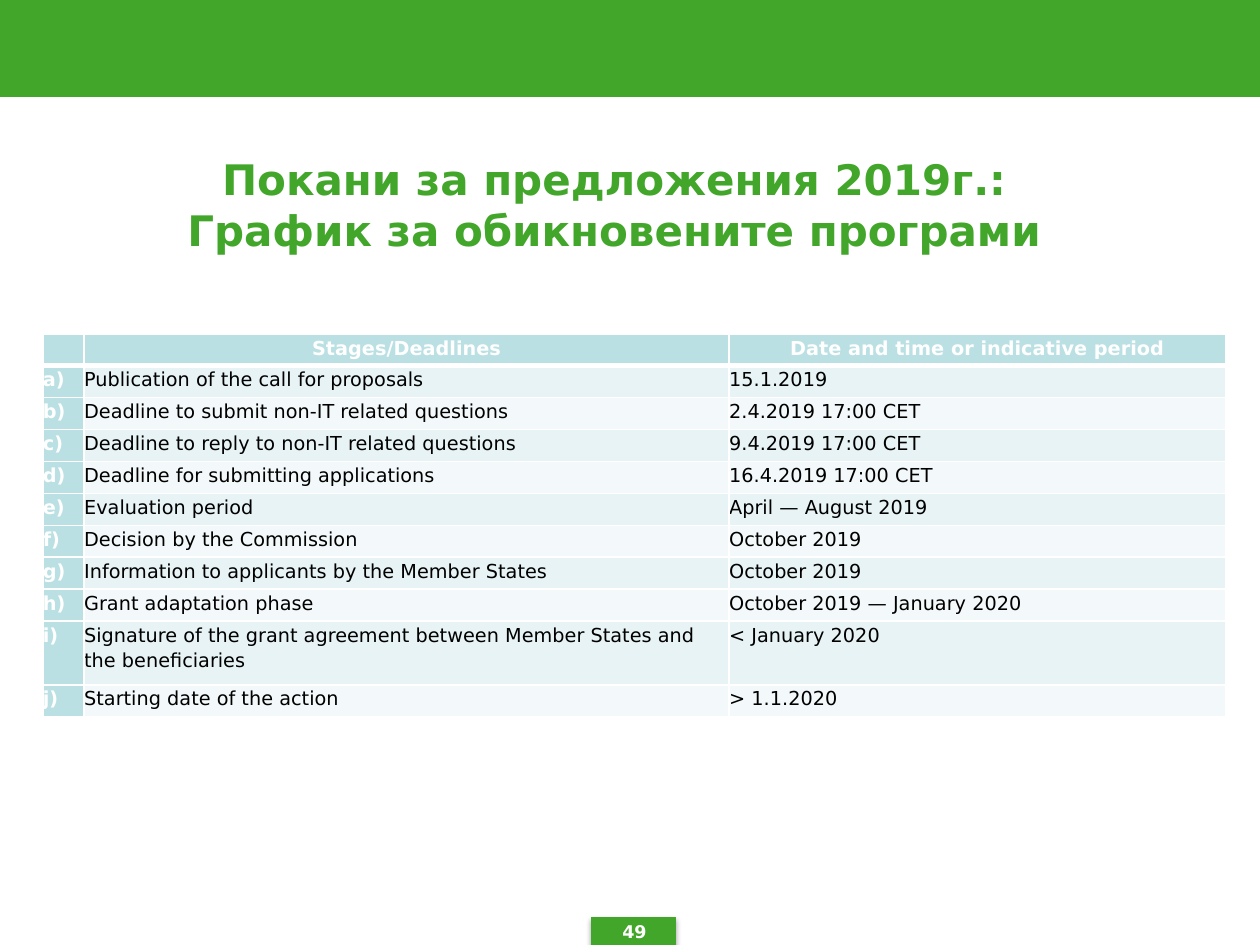
"""Builds the slide with the 2019 call schedule for simple programmes."""
from lxml import etree
from pptx import Presentation, util as u
from pptx.dml import color
from pptx.enum import shapes, text
from pptx.oxml import ns

COLORS = {"green": "42A62A", "white": "FFFFFF", "black": "000000",
          "key": "BBE0E3", "odd": "E7F3F4", "even": "F3F9FA"}
HEADER = ("", "Stages/Deadlines", "Date and time or indicative period")
STAGES = [
    ("Publication of the call for proposals", "15.1.2019"),
    ("Deadline to submit non-IT related questions", "2.4.2019 17:00 CET"),
    ("Deadline to reply to non-IT related questions", "9.4.2019 17:00 CET"),
    ("Deadline for submitting applications", "16.4.2019 17:00 CET"),
    ("Evaluation period", "April — August 2019"),
    ("Decision by the Commission", "October 2019"),
    ("Information to applicants by the Member States", "October 2019"),
    ("Grant adaptation phase", "October 2019 — January 2020"),
    ("Signature of the grant agreement between Member States and the beneficiaries",
     "< January 2020"),
    ("Starting date of the action", "> 1.1.2020"),
]
ROW_HEIGHT = 18.24
LONG_ROW = 9


def rgb(name):
    return color.RGBColor.from_string(COLORS[name])


def child(parent, tag, **attributes):
    return etree.SubElement(parent, ns.qn(tag), attributes)


class ScheduleSlide:
    """Holds the style and the current slide."""

    def __init__(self, slide, font="DejaVu Sans"):
        self.slide = slide
        self.font = font

    def style(self, paragraph, size, ink, bold=False, align=text.PP_ALIGN.CENTER):
        paragraph.alignment = align
        font = paragraph.font
        font.name, font.size, font.bold = self.font, u.Pt(size), bold
        font.color.rgb = rgb(ink)

    def bar(self, left, top, width, height, shadow=False):
        bar = self.slide.shapes.add_shape(
            shapes.MSO_SHAPE.RECTANGLE, *map(u.Pt, (left, top, width, height)))
        bar.shadow.inherit = False
        bar.fill.solid()
        bar.fill.fore_color.rgb = bar.line.color.rgb = rgb("green")
        bar.line.width = u.Pt(0.75)
        if shadow:
            effects = bar._element.spPr.find(ns.qn("a:effectLst"))
            outer = child(effects, "a:outerShdw", blurRad=str(u.Pt(3.1)),
                          dist=str(u.Pt(1.8)), dir="5400000", rotWithShape="0")
            shade = child(outer, "a:srgbClr", val=COLORS["black"])
            child(shade, "a:alpha", val="35000")

    def title(self, wording, left, top, width, height):
        title = self.slide.shapes.title
        title.left, title.top, title.width, title.height = map(
            u.Pt, (left, top, width, height))
        frame = title.text_frame
        frame.text = wording
        frame.auto_size = text.MSO_AUTO_SIZE.NONE
        frame.vertical_anchor = text.MSO_ANCHOR.MIDDLE
        self.style(frame.paragraphs[0], 24, "green", bold=True)

    def label(self, wording, left, top, width, height):
        frame = self.slide.shapes.add_textbox(
            *map(u.Pt, (left, top, width, height))).text_frame
        frame.word_wrap = True
        frame.text = wording
        self.style(frame.paragraphs[0], 10, "white", bold=True)

    def cell(self, cell, wording, fill, ink, bold, align, top=1, bottom=1):
        cell.margin_left = cell.margin_right = cell.margin_top = cell.margin_bottom = 0
        properties = cell._tc.get_or_add_tcPr()
        for side, width in (("L", 1), ("R", 1), ("T", top), ("B", bottom)):
            border = child(properties, f"a:ln{side}", w=str(u.Pt(width)))
            child(child(border, "a:solidFill"), "a:srgbClr", val=COLORS["white"])
        cell.fill.solid()
        cell.fill.fore_color.rgb = rgb(fill)
        paragraph = cell.text_frame.paragraphs[0]
        if wording:
            paragraph.text = wording
        else:
            child(paragraph._p, "a:endParaRPr", sz="1100")
        paragraph.line_spacing = 1.15
        paragraph.space_after = u.Pt(3)
        self.style(paragraph, 11, ink, bold, align)

    def schedule(self, left, top, widths):
        rows = len(STAGES) + 1
        table = self.slide.shapes.add_table(
            rows, len(widths), u.Pt(left), u.Pt(top),
            u.Pt(sum(widths)), u.Pt(ROW_HEIGHT * (rows + 1))).table
        table.first_row = table.horz_banding = False
        for column, width in zip(table.columns, widths):
            column.width = u.Pt(width)
        for index, row in enumerate(table.rows):
            row.height = u.Pt(ROW_HEIGHT * (2 if index == LONG_ROW else 1))
        for column, heading in enumerate(HEADER):
            self.cell(table.cell(0, column), heading, "key", "white", True,
                      text.PP_ALIGN.CENTER, bottom=3)
        for row, stage in enumerate(STAGES, 1):
            letter = f"{chr(ord('a') + row - 1)})"
            for column, wording in enumerate((letter, *stage)):
                is_key = column == 0
                fill = "key" if is_key else "odd" if row % 2 else "even"
                self.cell(table.cell(row, column), wording, fill,
                          "white" if is_key else "black", is_key,
                          text.PP_ALIGN.LEFT, top=3 if row == 1 else 1)


def main():
    deck = Presentation()
    deck.slide_width, deck.slide_height = u.Pt(720), u.Pt(540)
    page = ScheduleSlide(deck.slides.add_slide(deck.slide_layouts[5]))
    page.bar(0, 0, 720, 55.3)
    page.bar(338.2, 524.4, 48, 15.6, shadow=True)
    page.title("Покани за предложения 2019г.:\vГрафик за обикновените програми",
               42.5, 71.3, 617, 90.7)
    page.label("49", 337.7, 522.7, 49.7, 18.7)
    page.schedule(24.5, 190.8, (23.6, 368.6, 283.7))
    deck.save("out.pptx")


if __name__ == "__main__":
    main()
